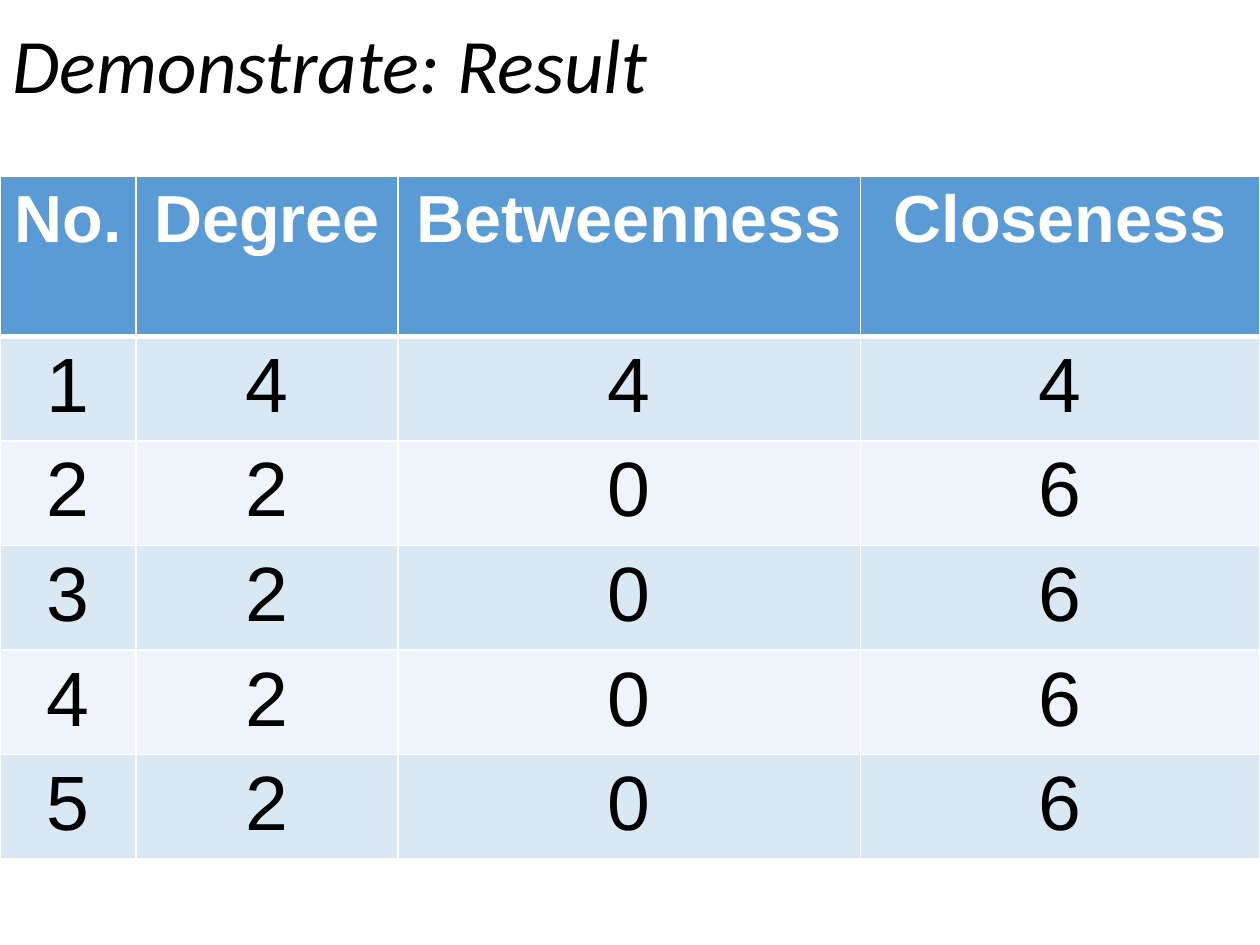
from lxml.etree import SubElement as Sub
from pptx import Presentation
from pptx.dml.color import RGBColor
from pptx.enum.text import MSO_ANCHOR, MSO_AUTO_SIZE, PP_ALIGN
from pptx.oxml.ns import qn
from pptx.util import Inches, Pt

HEAD = ["No.", "Degree", "Betweenness", "Closeness"]
SCORES = [(1, 4, 4, 4)] + [(n, 2, 0, 6) for n in range(2, 6)]
WIDTHS = [1.08, 2.08, 3.67, 3.17]
HEAD_H, ROW_H = 1.27, 0.83

TITLE = {"name": "Calibri", "size": Pt(44), "italic": True, "bold": False}
LABEL = {"name": "Arial", "size": Pt(38), "bold": True}
VALUE = {"name": "Arial", "size": Pt(44), "bold": False}


def color(text):
    return RGBColor.from_string(text)


class Deck:
    black, white, blue = "000000", "FFFFFF", "5B9BD5"
    bands = ["DAE8F4", "EEF4FA"]

    def __init__(self):
        self.prs = Presentation()
        self.prs.slide_width, self.prs.slide_height = Inches(10), Inches(7.5)
        self.slide = self.prs.slides.add_slide(self.prs.slide_layouts[5])

    def label(self, frame, text, style, ink, align):
        para = frame.paragraphs[0]
        para.alignment = align
        run = para.add_run()
        run.text = text
        for key, value in style.items():
            setattr(run.font, key, value)
        run.font.color.rgb = color(ink)

    def title(self, text, box):
        shape = self.slide.shapes.title
        for key, value in zip(("left", "top", "width", "height"), box):
            setattr(shape, key, Inches(value))
        frame = shape.text_frame
        frame.auto_size = MSO_AUTO_SIZE.NONE
        frame.vertical_anchor = MSO_ANCHOR.MIDDLE
        self.label(frame, text, TITLE, self.black, PP_ALIGN.LEFT)

    def border(self, cell, widths):
        """Add white cell borders; call before the fill, as the schema orders."""
        props = cell._tc.get_or_add_tcPr()
        for side, width in widths.items():
            line = Sub(props, qn(f"a:ln{side}"), w=str(Pt(width)))
            fill = Sub(line, qn("a:solidFill"))
            Sub(fill, qn("a:srgbClr"), val=self.white)

    def cell(self, cell, row, text):
        head = row == 0
        self.border(cell, {"L": 1, "R": 1, "T": 3 if row == 1 else 1,
                           "B": 3 if head else 1})
        cell.fill.solid()
        back = self.blue if head else self.bands[(row - 1) % 2]
        cell.fill.fore_color.rgb = color(back)
        self.label(cell.text_frame, text, LABEL if head else VALUE,
                   self.white if head else self.black, PP_ALIGN.CENTER)

    def table(self, rows, left, top, widths, heights):
        table = self.slide.shapes.add_table(
            len(rows), len(widths), Inches(left), Inches(top),
            Inches(sum(widths)), Inches(sum(heights))).table
        for col, width in zip(table.columns, widths):
            col.width = Inches(width)
        for r, (row, height) in enumerate(zip(rows, heights)):
            table.rows[r].height = Inches(height)
            for c, text in enumerate(row):
                self.cell(table.cell(r, c), r, str(text))


def main():
    deck = Deck()
    deck.title("Demonstrate: Result", (0, 0, 10, 1))
    deck.table([HEAD] + SCORES, 0, 1.4, WIDTHS,
               [HEAD_H] + [ROW_H] * len(SCORES))
    deck.prs.save("out.pptx")


if __name__ == "__main__":
    main()
